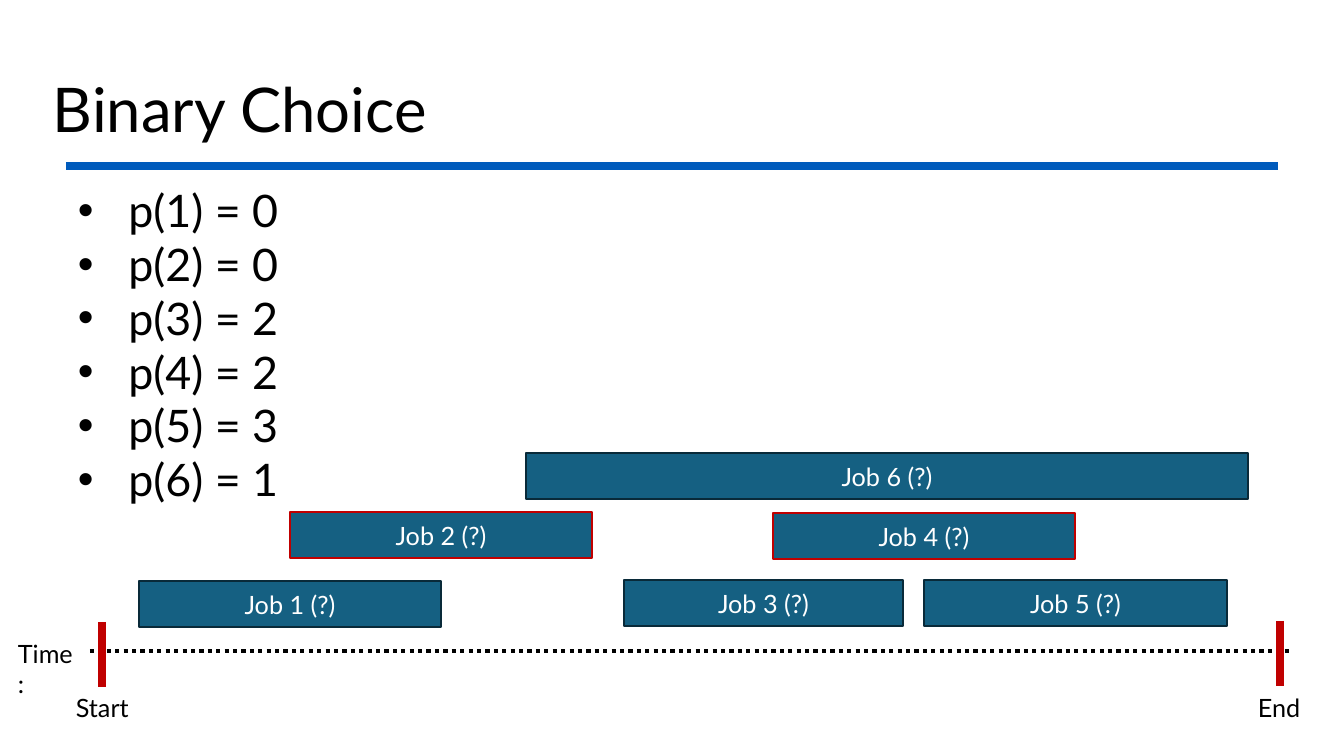
import pptx
import pptx.dml.color
import pptx.enum.dml
import pptx.enum.shapes
import pptx.enum.text
import pptx.oxml
import pptx.util
import lxml.etree

EMU_PER_PX = 914400 / 100.8
BLACK, WHITE, BLUE, RED = "000000", "FFFFFF", "005BBC", "C00000"
JOB_FILL, JOB_EDGE = "156082", "092A39"


def px(*lengths):
    return [pptx.util.Emu(round(length * EMU_PER_PX)) for length in lengths]


def color(hex_string):
    return pptx.dml.color.RGBColor.from_string(hex_string)


presentation = pptx.Presentation()
presentation.slide_width, presentation.slide_height = px(1344, 756)
slide = presentation.slides.add_slide(presentation.slide_layouts[6])

# Title, list of predecessors and timeline labels
predecessors = [0, 0, 2, 2, 3, 1]
equations = [f"p({job}) = {value}" for job, value in enumerate(predecessors, 1)]
texts = [
    # lines, left, top, width, height, size
    (["Binary Choice"], 43, 40, 1281, 146, 44),
    (equations, 68, 178, 1191, 336, 32),
    (["Time:"], 8, 633, 78, 40, 18),
    (["Start"], 66, 687, 80, 40, 18),
    (["End"], 1248, 687, 76, 40, 18),
]
for lines, left, top, width, height, size in texts:
    frame = slide.shapes.add_textbox(*px(left, top, width, height)).text_frame
    frame.word_wrap = True
    frame.text = "\n".join(lines)
    for paragraph in frame.paragraphs:
        paragraph.font.name = "Lato"
        paragraph.font.size = pptx.util.Pt(size)
        paragraph.font.color.rgb = color(BLACK)
        if lines is equations:
            properties = paragraph._p.get_or_add_pPr()
            properties.set("marL", "457200")
            properties.set("indent", "-457200")
            bullet_font = pptx.oxml.parse_xml(
                '<a:buFont xmlns:a="http://schemas.openxmlformats.org/drawingml/2006/main" typeface="Arial"/>')
            bullet = pptx.oxml.parse_xml(
                '<a:buChar xmlns:a="http://schemas.openxmlformats.org/drawingml/2006/main" char="•"/>')
            properties.insert(0, bullet_font)
            properties.insert(1, bullet)
    if size == 44:
        frame.vertical_anchor = pptx.enum.text.MSO_ANCHOR.MIDDLE
        frame.paragraphs[0].line_spacing = 0.9

# Title rule, time axis, start and end marks
rules = [
    # x1, y1, x2, y2, colour, line width, dash
    (66, 166, 1278, 166, BLUE, 6, None),
    (90, 651, 1293, 651, BLACK, 3, pptx.enum.dml.MSO_LINE.ROUND_DOT),
    (102, 622, 102, 687, RED, 6, None),
    (1280, 621, 1280, 686, RED, 6, None),
]
for x1, y1, x2, y2, line_color, line_width, dash in rules:
    connector = slide.shapes.add_connector(
        pptx.enum.shapes.MSO_CONNECTOR.STRAIGHT, *px(x1, y1, x2, y2))
    connector.line.color.rgb = color(line_color)
    connector.line.width = pptx.util.Pt(line_width)
    if dash:
        connector.line.dash_style = dash
    lxml.etree.SubElement(connector._element.spPr, pptx.oxml.ns.qn("a:effectLst"))

# Jobs on the timeline
jobs = [
    # number, left, top, width, edge colour, edge width
    (2, 290, 512, 302, RED, 1),
    (3, 624, 580, 279, JOB_EDGE, 1.5),
    (5, 924, 580, 303, JOB_EDGE, 1.5),
    (4, 773, 513, 302, RED, 1),
    (6, 526, 453, 722, JOB_EDGE, 1.5),
    (1, 139, 581, 302, JOB_EDGE, 1.5),
]
for number, left, top, width, edge, edge_width in jobs:
    shape = slide.shapes.add_shape(
        pptx.enum.shapes.MSO_SHAPE.RECTANGLE, *px(left, top, width, 46))
    shape.shadow.inherit = False
    shape.fill.solid()
    shape.fill.fore_color.rgb = color(JOB_FILL)
    shape.line.color.rgb = color(edge)
    shape.line.width = pptx.util.Pt(edge_width)
    shape.text_frame.text = f"Job {number} (?)"
    shape.text_frame.vertical_anchor = pptx.enum.text.MSO_ANCHOR.MIDDLE
    paragraph = shape.text_frame.paragraphs[0]
    paragraph.alignment = pptx.enum.text.PP_ALIGN.CENTER
    paragraph.font.name = "Lato"
    paragraph.font.size = pptx.util.Pt(18)
    paragraph.font.color.rgb = color(WHITE)

presentation.save("out.pptx")
